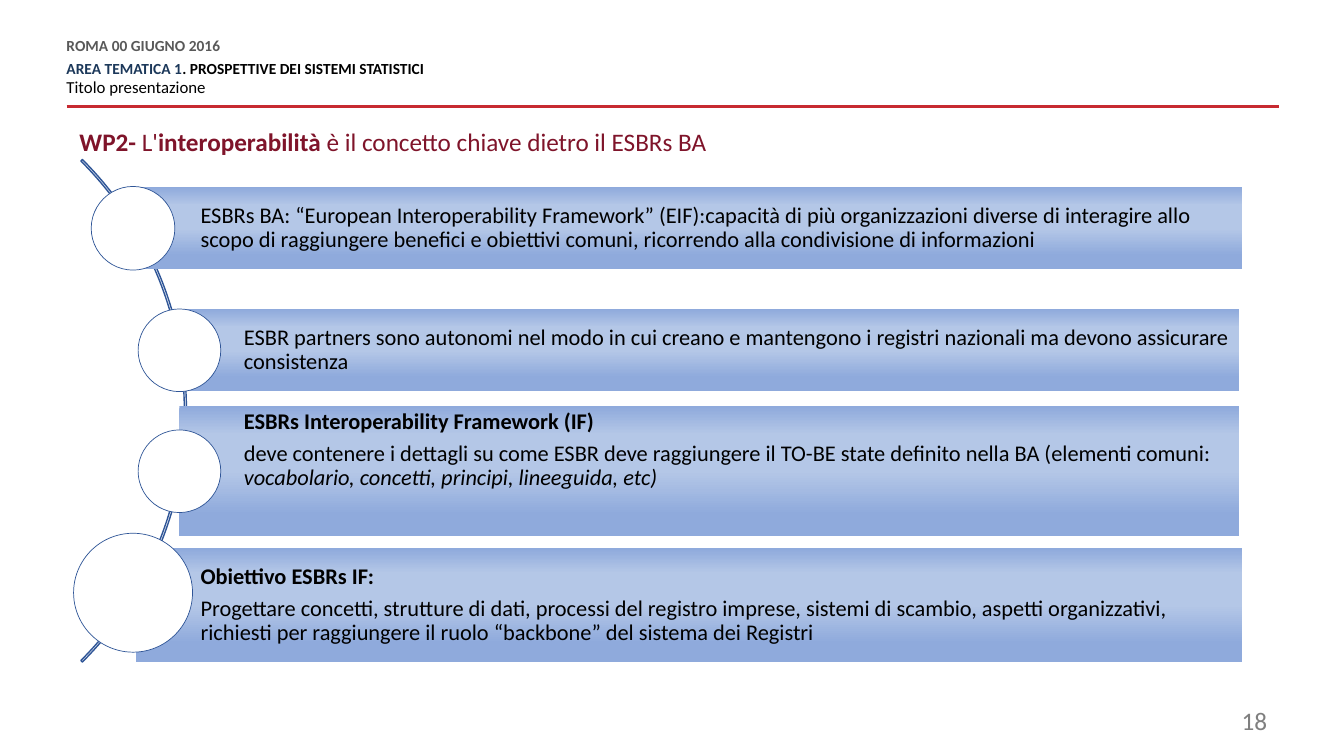
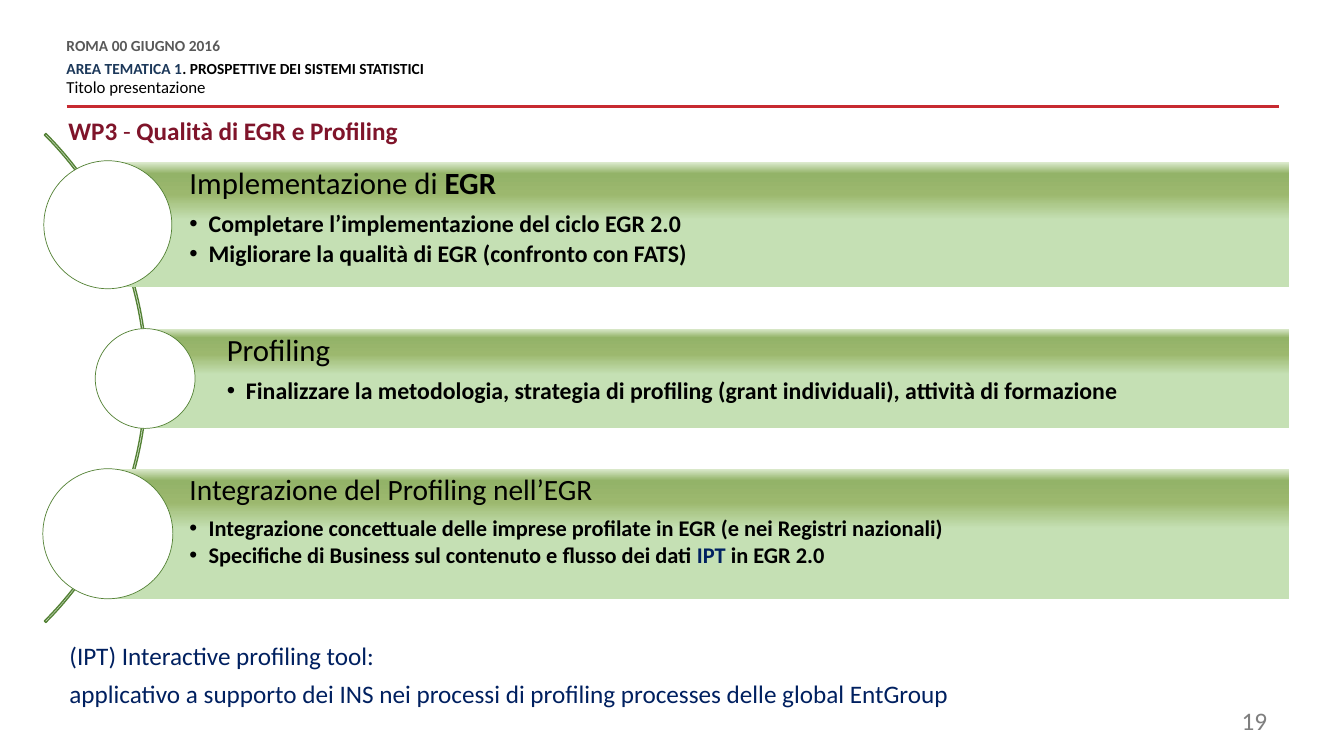
from dataclasses import dataclass, replace
from typing import Optional

from lxml.etree import SubElement
from pptx import Presentation
from pptx.dml.color import RGBColor
from pptx.enum.shapes import MSO_CONNECTOR, MSO_SHAPE
from pptx.enum.text import MSO_ANCHOR, PP_ALIGN
from pptx.oxml.ns import qn
from pptx.util import Inches, Length, Pt


@dataclass(frozen=True)
class Theme:
    font: str = "Calibri"
    ink: str = "000000"
    paper: str = "FFFFFF"
    title: str = "7F142A"
    rule: str = "C72A31"
    date: str = "595959"
    area: str = "1C385A"
    page: str = "7F7F7F"
    note: str = "002060"
    small: int = 11
    label: int = 12
    body: int = 16
    point: int = 17
    large: int = 18
    head: int = 22


@dataclass(frozen=True)
class Run:
    text: str
    bold: Optional[bool] = None
    slant: Optional[bool] = None
    color: Optional[str] = None


@dataclass(frozen=True)
class Para:
    runs: tuple[Run, ...]
    size: float
    bold: bool = False
    color: str = "000000"
    lead: Optional[float | Length] = None
    before: float = 0
    after: float = 0
    bullet: bool = False
    align: PP_ALIGN = PP_ALIGN.LEFT


@dataclass(frozen=True)
class Box:
    col: float
    row: float
    cols: float
    rows: float

    def place(self) -> tuple[Length, ...]:
        return tuple(grid(n) for n in (self.col, self.row, self.cols, self.rows))


@dataclass(frozen=True)
class Bar:
    box: Box
    ring: float
    paras: tuple[Para, ...]
    shift: float = 0
    drop: float = 0
    top: bool = False


@dataclass(frozen=True)
class Look:
    line: str
    stops: tuple[tuple[int, str], ...]
    arc: Box
    left: float
    pad: float


THEME = Theme()
COLS, ROWS = 133.33, 75
BLUE = Look("2F5597", ((0, "8FAADC"), (22, "B4C7E7"), (50, "B4C7E7"),
                       (83, "8FAADC"), (100, "8FAADC")),
            Box(-52, 5.5, 70.5, 70.5), 6.4, 0.4)
GREEN = Look("548235", ((0, "DDEBCF"), (9, "93B368"), (26, "9CB86E"),
                        (34, "ADC98B"), (46, "C5E0B4"), (62, "C5E0B4")),
             Box(-54, 3.2, 68.6, 68.6), 8.1, 0.6)


def grid(count: float) -> Length:
    return Inches(count / 10)


def tint(code: str) -> RGBColor:
    return RGBColor.from_string(code)


def body(*runs: Run, bold: bool = False) -> Para:
    return Para(runs, THEME.body, bold, lead=0.9, after=THEME.body * 0.35)


def head(*runs: Run, size: float = THEME.head) -> Para:
    return Para(runs, size, lead=0.9, after=size * 0.35)


def point(*runs: Run, size: float = THEME.point) -> Para:
    return Para(runs, size, True, lead=0.9, after=size * 0.15, bullet=True)


def write(frame, paras: tuple[Para, ...]) -> None:
    for i, item in enumerate(paras):
        para = frame.paragraphs[0] if i == 0 else frame.add_paragraph()
        if item.bullet:
            props = para._p.get_or_add_pPr()
            props.set("marL", str(grid(1.9)))
            props.set("indent", str(-grid(1.9)))
            SubElement(props, qn("a:buFont")).set("typeface", "Arial")
            SubElement(props, qn("a:buChar")).set("char", "•")
        para.alignment = item.align
        para.space_before = Pt(item.before)
        para.space_after = Pt(item.after)
        if item.lead is not None:
            para.line_spacing = item.lead
        font = para.font
        font.name, font.size, font.bold = THEME.font, Pt(item.size), item.bold
        font.color.rgb = tint(item.color)
        for part in item.runs:
            run = para.add_run()
            run.text = part.text
            if part.bold is not None:
                run.font.bold = part.bold
            if part.slant is not None:
                run.font.italic = part.slant
            if part.color:
                run.font.color.rgb = tint(part.color)


def inset(frame, left: float, pad: float) -> None:
    frame.margin_left = grid(left)
    frame.margin_top = frame.margin_right = frame.margin_bottom = grid(pad)


def label(slide, box: Box, *paras: Para, wrap: bool = False, pad: Optional[float] = None) -> None:
    frame = slide.shapes.add_textbox(*box.place()).text_frame
    frame.word_wrap = wrap
    if pad is not None:
        inset(frame, pad, pad)
    write(frame, paras)


def shape(slide, kind: MSO_SHAPE, box: Box):
    item = slide.shapes.add_shape(kind, *box.place())
    item.shadow.inherit = False
    return item


def edge(item, color: str, width: float) -> None:
    item.line.color.rgb = tint(color)
    item.line.width = Pt(width)


def blend(item, stops: tuple[tuple[int, str], ...]) -> None:
    item.fill.gradient()
    item.fill.gradient_angle = 270
    marks = item._element.spPr.find(qn("a:gradFill")).find(qn("a:gsLst"))
    for old in list(marks):
        marks.remove(old)
    for share, color in stops:
        mark = SubElement(marks, qn("a:gs"))
        mark.set("pos", str(share * 1000))
        SubElement(mark, qn("a:srgbClr")).set("val", color)


def frame(slide, page: int) -> None:
    rule = slide.shapes.add_connector(
        MSO_CONNECTOR.STRAIGHT, grid(6.6), grid(10.6), grid(126.9), grid(10.6))
    edge(rule, THEME.rule, 2)
    SubElement(rule._element.spPr, qn("a:effectLst"))
    lead = Pt(10.8)
    label(slide, Box(6.6, 3.9, 83.4, 5.9),
          Para((Run("ROMA 00 GIUGNO 2016"),), THEME.small, True, THEME.date, lead, after=6),
          Para((Run("AREA TEMATICA 1", color=THEME.area),
                Run(". PROSPETTIVE DEI SISTEMI STATISTICI")),
               THEME.small, True, lead=lead),
          Para((Run("Titolo presentazione"),), THEME.label, lead=lead, before=3, after=6),
          wrap=True, pad=0)
    label(slide, Box(95.6, 69.5, 31.1, 4),
          Para((Run(str(page)),), THEME.large, color=THEME.page, align=PP_ALIGN.RIGHT),
          wrap=True)


def list_bars(slide, look: Look, bars: tuple[Bar, ...]) -> None:
    arc = shape(slide, MSO_SHAPE.BLOCK_ARC, look.arc)
    for i, value in enumerate((189, 27, 0.003)):
        arc.adjustments[i] = value
    arc.fill.background()
    edge(arc, look.line, 1)
    for bar in bars:
        band = shape(slide, MSO_SHAPE.RECTANGLE, bar.box)
        blend(band, look.stops)
        band.line.fill.background()
        text = band.text_frame
        text.word_wrap = True
        text.vertical_anchor = MSO_ANCHOR.TOP if bar.top else MSO_ANCHOR.MIDDLE
        inset(text, look.left, look.pad)
        write(text, bar.paras)
        half = bar.ring / 2
        ring = shape(slide, MSO_SHAPE.OVAL, Box(
            bar.box.col + bar.shift - half,
            bar.box.row + bar.box.rows / 2 + bar.drop - half, bar.ring, bar.ring))
        ring.fill.solid()
        ring.fill.fore_color.rgb = tint(THEME.paper)
        edge(ring, look.line, 0.5)


def title(*runs: Run) -> Para:
    return Para(runs, THEME.large, True, THEME.title)


BASE = (
    Bar(Box(13.5, 18.6, 109.7, 8.1), 8.3, (body(Run(
        "ESBRs BA: “European Interoperability Framework” (EIF):capacità di più "
        "organizzazioni diverse di interagire allo scopo di raggiungere benefici e "
        "obiettivi comuni, ricorrendo alla condivisione di informazioni")),), -0.3),
    Bar(Box(17.8, 30.7, 105.1, 8.1), 8.2, (body(Run(
        "ESBR partners sono autonomi nel modo in cui creano e mantengono i registri "
        "nazionali ma devono assicurare consistenza")),)),
    Bar(Box(17.8, 40.3, 105.1, 12.9), 8.2, (
        body(Run("ESBRs Interoperability Framework (IF)"), bold=True),
        body(Run("deve contenere i dettagli su come ESBR deve raggiungere il TO-BE state "
                 "definito nella BA (elementi comuni: "),
             Run("vocabolario, concetti, principi, lineeguida, etc)", slant=True))), top=True),
    Bar(Box(13.5, 54.4, 109.7, 11.3), 11.8, (
        body(Run("Obiettivo ESBRs IF:"), bold=True),
        body(Run("Progettare concetti, strutture di dati, processi del registro imprese, "
                 "sistemi di scambio, aspetti organizzativi, richiesti per raggiungere il "
                 "ruolo “backbone” del sistema dei Registri"))), -0.3, -1.25),
)

GOALS = tuple(replace(bar, top=True) for bar in (
    Bar(Box(10.7, 16.1, 117.2, 12.4), 12.7, (
        head(Run("Implementazione di "), Run("EGR", True)),
        point(Run("Completare l’implementazione del ciclo EGR 2.0")),
        point(Run("Migliorare la qualità di EGR (confronto con FATS)")))),
    Bar(Box(14.4, 32.6, 113.5, 9.9), 9.9, (
        head(Run("Profiling")),
        point(Run("Finalizzare la metodologia, strategia di profiling (grant individuali), "
                  "attività di formazione")))),
    Bar(Box(10.7, 46.5, 117.2, 12.9), 12.9, (
        head(Run("Integrazione del Profiling nell’EGR"), size=21),
        point(Run("Integrazione concettuale delle imprese profilate in EGR "
                  "(e nei Registri nazionali)"), size=THEME.body),
        point(Run("Specifiche di Business sul contenuto e flusso dei dati "),
              Run("IPT", color=THEME.note), Run(" in EGR 2.0"), size=THEME.body))),
))


def main() -> None:
    deck = Presentation()
    deck.slide_width, deck.slide_height = grid(COLS), grid(ROWS)
    first, second = (deck.slides.add_slide(deck.slide_layouts[6]) for _ in range(2))
    for page, slide in enumerate((first, second), 18):
        frame(slide, page)

    list_bars(first, BLUE, BASE)
    label(first, Box(6.9, 12, 64.9, 4), title(
        Run("WP2- "), Run("L'", False), Run("interoperabilità"),
        Run(" è il concetto chiave dietro il ESBRs BA", False)))

    list_bars(second, GREEN, GOALS)
    label(second, Box(5.8, 10.9, 35.6, 4), title(
        Run("WP3"), Run(" - ", False), Run("Qualità di EGR e Profiling")))
    label(second, Box(5.9, 63, 91.9, 7.9),
          Para((Run("(IPT) Interactive profiling tool:"),), THEME.large, color=THEME.note),
          Para((Run("applicativo a supporto dei INS nei processi di profiling processes "
                    "delle global EntGroup"),), THEME.large, color=THEME.note, before=6))
    deck.save("out.pptx")


if __name__ == "__main__":
    main()
